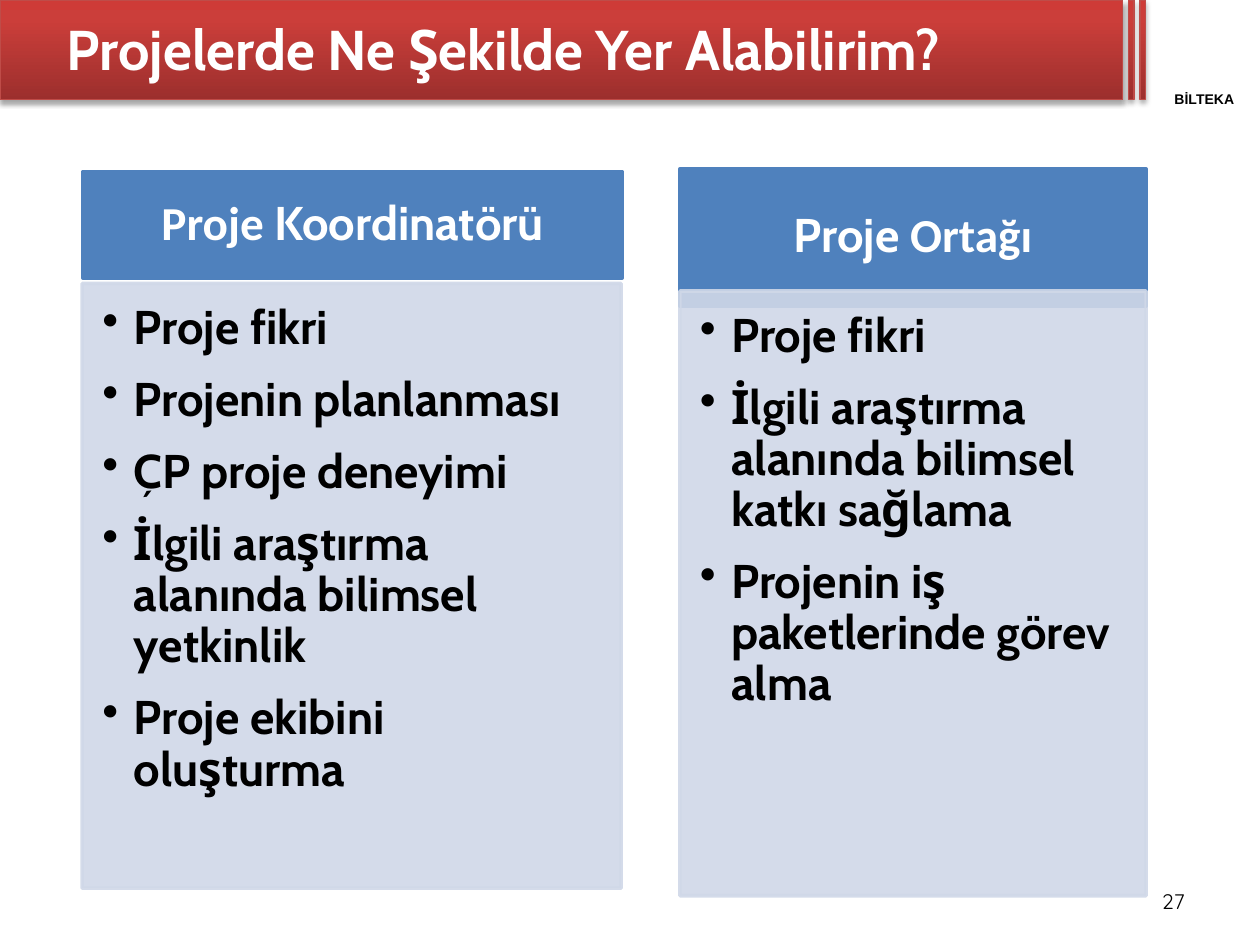
from copy import deepcopy

from lxml.etree import SubElement
from pptx import Presentation
from pptx.dml.color import RGBColor
from pptx.enum.shapes import MSO_SHAPE as Shape
from pptx.enum.text import MSO_ANCHOR as Anchor, PP_ALIGN as Align
from pptx.oxml.ns import qn
from pptx.util import Pt

COLORS = {
    "dark red": "9C2F2D", "red": "CB3E3A", "light red": "CE3B37",
    "red edge": "BF4C48", "blue": "4F81BD", "pale blue": "D0D8E8",
    "white": "FFFFFF", "black": "000000",
}
TITLE = "Projelerde Ne Şekilde Yer Alabilirim?"
AGENCY = "BİLTEKA"
PAGE = "27"
ROLES = [
    {
        "heading": [("Proje ", "Calibri"), ("Koordinatörü", "Cabin")],
        "heading box": (47.5, 98, 308, 61),
        "duties box": (47, 162, 308, 345.6),
        "duties": ["Proje fikri", "Projenin planlanması", "ÇP proje deneyimi",
                   "İlgili araştırma alanında bilimsel yetkinlik",
                   "Proje ekibini oluşturma"],
    },
    {
        "heading": [("Proje", "Cabin"), (" Ortağı", "Calibri")],
        "heading box": (388.5, 96.5, 266.5, 78.5),
        "duties box": (388.5, 166.3, 266.5, 345.6),
        "duties": ["Proje fikri",
                   "İlgili araştırma alanında bilimsel katkı sağlama",
                   "Projenin iş paketlerinde görev alma"],
    },
]
BANNER_HEIGHT = 57
BANNER_PARTS = [(0, 641.5), (645, 3), (651.5, 3)]  # left, width
BANNER_STOPS = [(0, "dark red"), (0.8, "red"), (1, "light red")]
HEADING_INSETS = (15, 8.5, 15, 8.5)
DUTIES_INSETS = (11.5, 11.5, 15, 17)


def rgb(name):
    return RGBColor.from_string(COLORS[name])


def set_all(target, values):
    for attribute, value in values.items():
        setattr(target, attribute, value)


def add_rect(slide, box, edge, line_width):
    rect = slide.shapes.add_shape(Shape.RECTANGLE, *map(Pt, box))
    rect.shadow.inherit = False
    rect.line.color.rgb = rgb(edge)
    rect.line.width = Pt(line_width)
    return rect


def set_frame(frame, insets, anchor):
    sides = ("margin_left", "margin_top", "margin_right", "margin_bottom")
    set_all(frame, dict(zip(sides, map(Pt, insets))))
    set_all(frame, {"word_wrap": True, "vertical_anchor": anchor})


def add_run(paragraph, text, font, size, color, bold=True):
    run = paragraph.add_run()
    run.text = text
    set_all(run.font, {"name": font, "size": Pt(size), "bold": bold})
    run.font.color.rgb = rgb(color)


def add_label(slide, box, text, font, size, color, align,
              bold=True, insets=(7.2, 3.6, 7.2, 3.6), anchor=Anchor.MIDDLE):
    frame = slide.shapes.add_textbox(*map(Pt, box)).text_frame
    set_frame(frame, insets, anchor)
    frame.paragraphs[0].alignment = align
    add_run(frame.paragraphs[0], text, font, size, color, bold)


def add_banner_part(slide, left, width):
    part = add_rect(slide, (left, 0, width, BANNER_HEIGHT), "red edge", 0.75)
    part.fill.gradient()
    part.fill.gradient_angle = 90
    stop_list = part._element.spPr.find(".//" + qn("a:gsLst"))
    stop_list.append(deepcopy(stop_list[-1]))
    for stop, (position, color) in zip(part.fill.gradient_stops, BANNER_STOPS):
        stop.position = position
        stop.color.rgb = rgb(color)
    effects = part._element.spPr.find(qn("a:effectLst"))
    shadow = SubElement(effects, qn("a:outerShdw"), blurRad=str(Pt(3.1)),
                        dist=str(Pt(1.8)), dir="5400000", rotWithShape="0")
    shade = SubElement(shadow, qn("a:srgbClr"), val=COLORS["black"])
    SubElement(shade, qn("a:alpha"), val="35000")


def add_heading(slide, role):
    rect = add_rect(slide, role["heading box"], "blue", 2)
    rect.fill.solid()
    rect.fill.fore_color.rgb = rgb("blue")
    set_frame(rect.text_frame, HEADING_INSETS, Anchor.MIDDLE)
    paragraph = rect.text_frame.paragraphs[0]
    set_all(paragraph, {"alignment": Align.CENTER, "line_spacing": 0.9})
    for text, font in role["heading"]:
        add_run(paragraph, text, font, 27, "white")


def add_duties(slide, role):
    rect = add_rect(slide, role["duties box"], "pale blue", 2)
    rect.fill.solid()
    rect.fill.fore_color.rgb = rgb("pale blue")
    for color in rect._element.spPr.iter(qn("a:srgbClr")):
        SubElement(color, qn("a:alpha"), val="90000")
    frame = rect.text_frame
    set_frame(frame, DUTIES_INSETS, Anchor.TOP)
    for index, duty in enumerate(role["duties"]):
        paragraph = frame.add_paragraph() if index else frame.paragraphs[0]
        properties = paragraph._p.get_or_add_pPr()
        set_all(paragraph, {"level": 1, "alignment": Align.LEFT,
                            "line_spacing": 0.9, "space_after": Pt(12)})
        properties.set("marL", str(Pt(18)))
        properties.set("indent", str(Pt(-18)))
        SubElement(properties, qn("a:buChar"), char="•")
        add_run(paragraph, duty, "Cabin", 27, "black")


def main():
    deck = Presentation()
    set_all(deck, {"slide_width": Pt(720), "slide_height": Pt(540)})
    slide = deck.slides.add_slide(deck.slide_layouts[6])
    for left, width in BANNER_PARTS:
        add_banner_part(slide, left, width)
    add_label(slide, (651.5, 52, 73.5, 9.5), AGENCY, "Arial", 8, "black",
              Align.CENTER, insets=(0, 0, 0, 0), anchor=Anchor.TOP)
    add_label(slide, (31, 0, 613, 55.5), TITLE, "Cabin", 32, "white", Align.LEFT)
    for role in ROLES:
        add_heading(slide, role)
        add_duties(slide, role)
    add_label(slide, (516, 500.5, 168, 28.8), PAGE, "Quicksand", 12, "black",
              Align.RIGHT, bold=False)
    deck.save("out.pptx")


if __name__ == "__main__":
    main()
